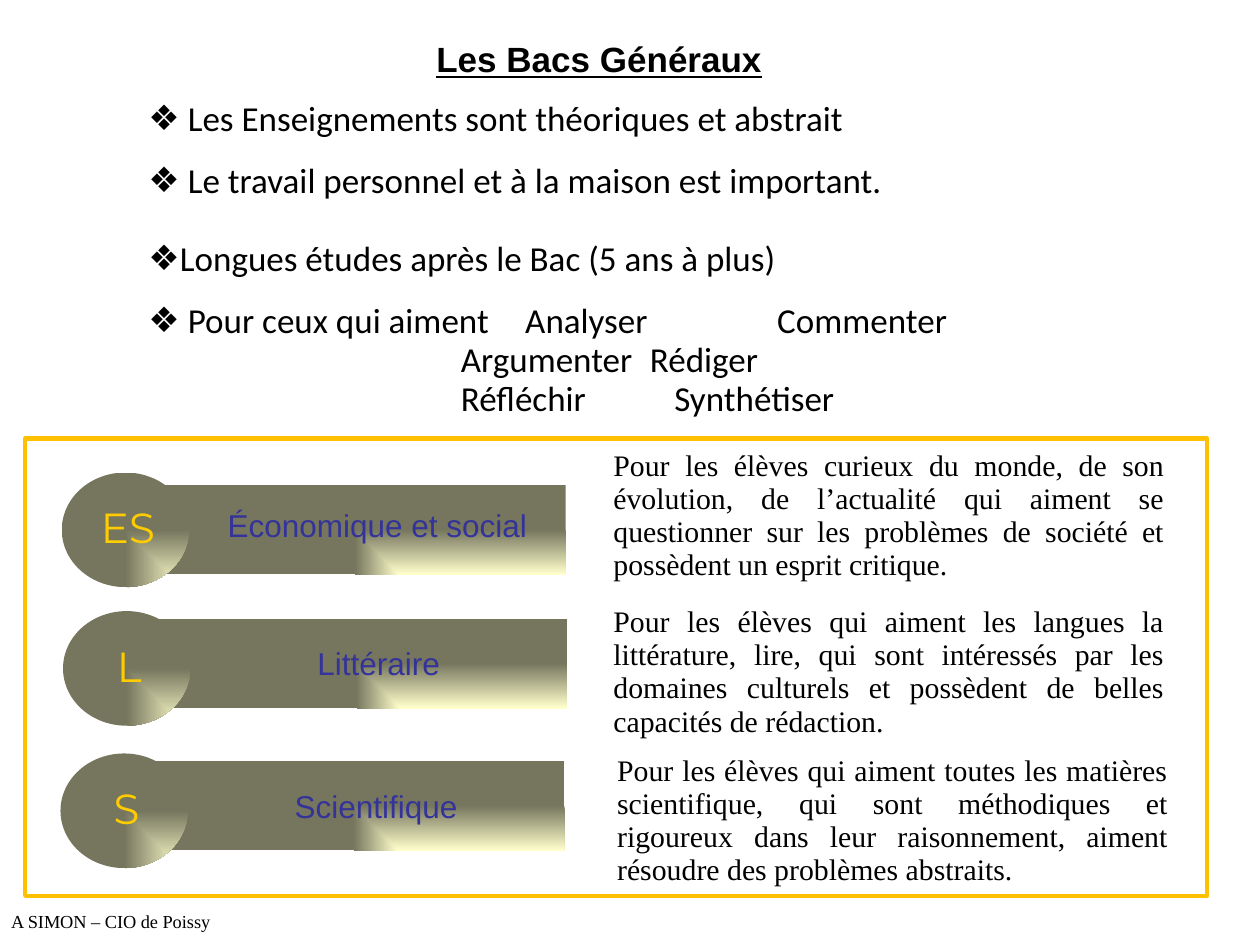
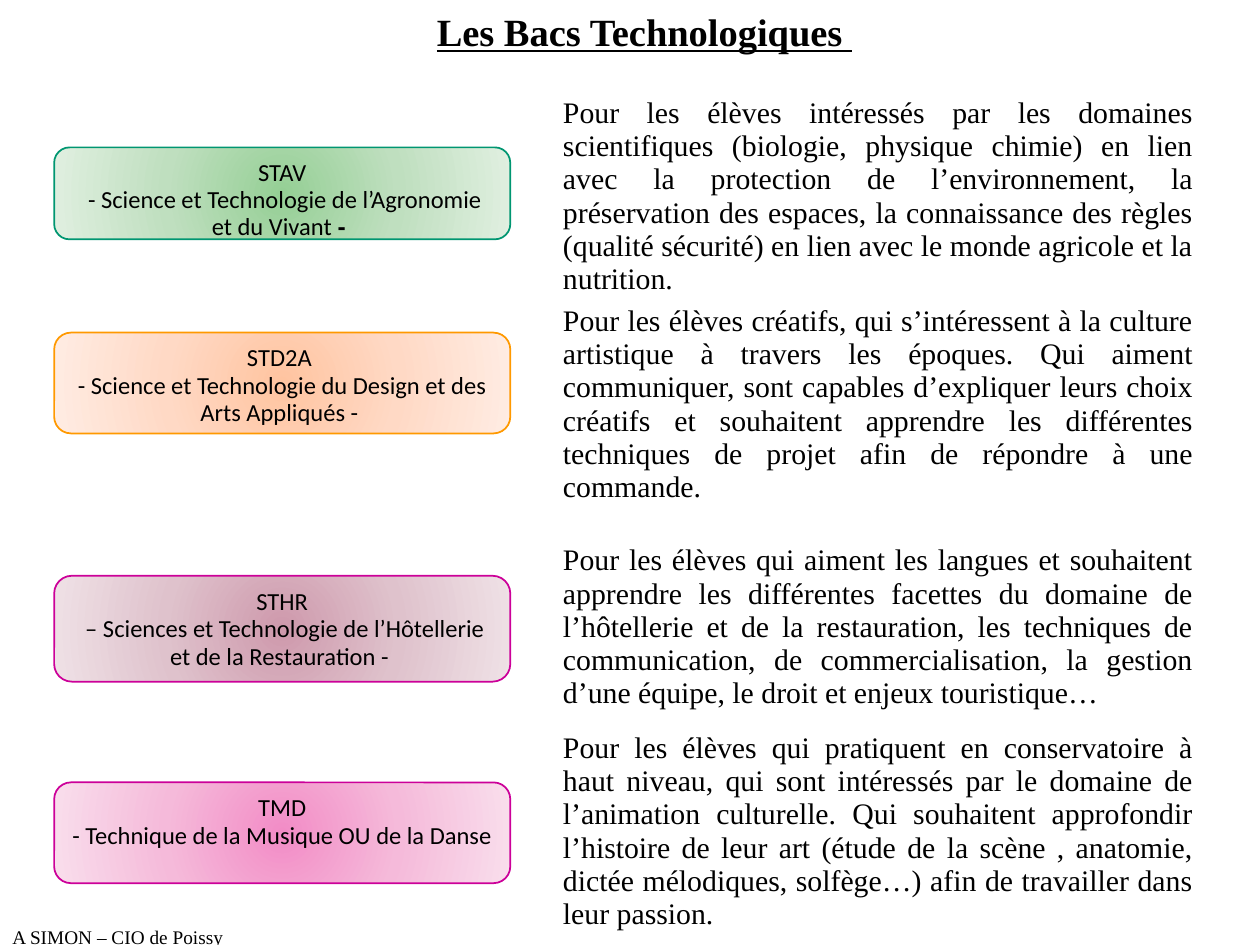
from lxml import etree
from pptx import Presentation
from pptx.dml.color import RGBColor
from pptx.enum.shapes import MSO_SHAPE
from pptx.enum.text import MSO_ANCHOR, PP_ALIGN
from pptx.oxml import parse_xml
from pptx.oxml.ns import nsdecls, qn
from pptx.util import Inches, Pt

BLACK = RGBColor(0x00, 0x00, 0x00)
GOLD = RGBColor(0xFF, 0xCC, 0x00)
FRAME_GOLD = RGBColor(0xFF, 0xC0, 0x00)
INDIGO = RGBColor(0x33, 0x33, 0x99)
CREAM = RGBColor(0xFF, 0xFF, 0xCC)
OLIVE = RGBColor(0x76, 0x76, 0x5E)
GREEN = RGBColor(0x00, 0x96, 0x71)
ORANGE = RGBColor(0xFF, 0x99, 0x00)
MAGENTA = RGBColor(0xCC, 0x00, 0x99)
GREENS = [RGBColor(0x95, 0xCF, 0x95), RGBColor(0xBF, 0xDF, 0xBF), RGBColor(0xE0, 0xEF, 0xE0)]
PEACHES = [RGBColor(0xFF, 0xC4, 0xA0), RGBColor(0xFF, 0xD9, 0xC5), RGBColor(0xFF, 0xEC, 0xE3)]
MAUVES = [RGBColor(0xCE, 0x99, 0xAC), RGBColor(0xDF, 0xC2, 0xCC), RGBColor(0xEF, 0xE1, 0xE6)]
PINKS = [RGBColor(0xF2, 0x8C, 0xC6), RGBColor(0xF5, 0xBA, 0xDA), RGBColor(0xF9, 0xDE, 0xEC)]
SERIF = "Times New Roman"
LINE_SPACING = 0.93
FOOTER = "A SIMON – CIO de Poissy"


def write(box, lines, font, size, align=PP_ALIGN.LEFT, color=BLACK, heading=False):
    frame = box.text_frame
    frame.word_wrap = True
    frame.vertical_anchor = MSO_ANCHOR.TOP
    for index, line in enumerate(lines):
        para = frame.add_paragraph() if index else frame.paragraphs[0]
        para.alignment = align
        para.line_spacing = LINE_SPACING
        span = para.add_run()
        span.text = line
        span.font.name = font
        span.font.size = Pt(size)
        span.font.color.rgb = color
        if heading:
            span.font.bold = True
            span.font.underline = True
    return frame


def shade(shape, colors, path, left, top, right, bottom):
    shape.shadow.inherit = False
    shape.line.fill.background()
    shape.fill.background()
    step = 100000 // (len(colors) - 1)
    stops = "".join(
        f'<a:gs pos="{index * step}"><a:srgbClr val="{color}"/></a:gs>'
        for index, color in enumerate(colors)
    )
    gradient = parse_xml(
        f'<a:gradFill {nsdecls("a")} rotWithShape="1"><a:gsLst>{stops}</a:gsLst>'
        f'<a:path path="{path}"><a:fillToRect l="{left}" t="{top}" r="{right}" b="{bottom}"/>'
        "</a:path></a:gradFill>"
    )
    properties = shape.element.spPr
    properties.replace(properties.find(qn("a:noFill")), gradient)


deck = Presentation()
deck.slide_width = Inches(10)
deck.slide_height = Inches(7.5)
blank = deck.slide_layouts[6]

page = deck.slides.add_slide(blank)
title = page.shapes.add_textbox(Inches(1.53), Inches(0.28), Inches(6.45), Inches(0.42))
write(title, ["Les Bacs Généraux"], "Arial", 20, PP_ALIGN.CENTER, heading=True)

points = [
    (" Les Enseignements sont théoriques et abstrait", 0, 0, []),
    (" Le travail personnel et à la maison est important.", 13, 0, []),
    ("Longues études après le Bac (5 ans à plus)", 22, 0, []),
    (" Pour ceux qui aiment \tAnalyser\tCommenter", 13, 0, [2.99, 4.99]),
    ("Argumenter\tRédiger", 0, 2.48, []),
    ("Réfléchir\t\t\tSynthétiser", 0, 2.48, []),
]
summary = page.shapes.add_textbox(Inches(1.08), Inches(0.75), Inches(6.85), Inches(2.67))
frame = write(summary, [point[0] for point in points], "Calibri", 20)
for para, (text, gap, margin, stops) in zip(frame.paragraphs, points):
    if gap:
        para.space_before = Pt(gap)
    properties = para._p.get_or_add_pPr()
    properties.set("marL", str(Inches(margin)))
    properties.set("indent", "0")
    if not margin:
        color = etree.SubElement(properties, qn("a:buClr"))
        etree.SubElement(color, qn("a:srgbClr"), val=str(BLACK))
        etree.SubElement(properties, qn("a:buFont"), typeface="Arial")
        etree.SubElement(properties, qn("a:buChar"), char="❖")
    if stops:
        tabs = etree.SubElement(properties, qn("a:tabLst"))
        for stop in stops:
            etree.SubElement(tabs, qn("a:tab"), pos=str(Inches(stop)), algn="l")

tracks = [
    ("ES", "Économique et social", 0.49, 3.75, 3.85, 4.77, 3.52,
     "Pour les élèves curieux du monde, de son évolution, de l’actualité qui aiment se "
     "questionner sur les problèmes de société et possèdent un esprit critique."),
    ("L", "Littéraire", 0.5, 4.85, 4.91, 4.77, 4.76,
     "Pour les élèves qui aiment les langues la littérature, lire, qui sont intéressés par les "
     "domaines culturels et possèdent de belles capacités de rédaction."),
    ("S", "Scientifique", 0.48, 5.98, 6.04, 4.8, 5.94,
     "Pour les élèves qui aiment toutes les matières scientifique, qui sont méthodiques et "
     "rigoureux dans leur raisonnement, aiment résoudre des problèmes abstraits."),
]
for code, name, left, top, bar_top, profile_left, profile_top, profile in tracks:
    bar = page.shapes.add_shape(
        MSO_SHAPE.RECTANGLE, Inches(left + 0.65), Inches(bar_top), Inches(3.35), Inches(0.71))
    badge = page.shapes.add_shape(
        MSO_SHAPE.OVAL, Inches(left), Inches(top), Inches(1.01), Inches(0.91))
    for shape in (bar, badge):
        shade(shape, [CREAM, OLIVE], "rect", 100000, 100000, 0, 0)
    initials = page.shapes.add_textbox(
        Inches(left - 0.07), Inches(top + 0.22), Inches(1.19), Inches(0.51))
    write(initials, [code], "Montserrat", 24, PP_ALIGN.CENTER, GOLD)
    label = page.shapes.add_textbox(
        Inches(left + 0.99), Inches(top + 0.24), Inches(3.03), Inches(0.4))
    write(label, [name], "Arial", 18, PP_ALIGN.CENTER, INDIGO)
    description = page.shapes.add_textbox(
        Inches(profile_left), Inches(profile_top), Inches(4.57), Inches(1.17))
    write(description, [profile], SERIF, 17, PP_ALIGN.JUSTIFY)

border = page.shapes.add_shape(
    MSO_SHAPE.RECTANGLE, Inches(0.2), Inches(3.48), Inches(9.38), Inches(3.63))
border.shadow.inherit = False
border.fill.background()
border.line.color.rgb = FRAME_GOLD
border.line.width = Pt(2.5)
footer = page.shapes.add_textbox(Inches(-0.01), Inches(7.19), Inches(2.47), Inches(0.27))
write(footer, [FOOTER], SERIF, 10.5)

page = deck.slides.add_slide(blank)
title = page.shapes.add_textbox(Inches(3.03), Inches(0.03), Inches(4.17), Inches(0.47))
write(title, ["Les Bacs Technologiques "], SERIF, 22, PP_ALIGN.CENTER, heading=True)
title.text_frame.margin_top = Inches(0.07)

programs = [
    ("STAV", " - Science et Technologie de l’Agronomie et du Vivant ", "- ",
     1.17, 0.73, GREENS, GREEN, 0.72, 1.43,
     "Pour les élèves intéressés par les domaines scientifiques (biologie, physique chimie) en "
     "lien avec la protection de l’environnement, la préservation des espaces, la connaissance "
     "des règles (qualité sécurité) en lien avec le monde agricole et la nutrition. "),
    ("STD2A ", "- Science et Technologie du Design et des Arts Appliqués - ", "",
     2.64, 0.8, PEACHES, ORANGE, 2.37, 1.7,
     "Pour les élèves créatifs, qui s’intéressent à la culture artistique à travers les époques. "
     "Qui aiment communiquer, sont capables d’expliquer leurs choix créatifs et souhaitent "
     "apprendre les différentes techniques de projet afin de répondre à une commande."),
    ("STHR", " – Sciences et Technologie de l’Hôtellerie et de la Restauration - ", "",
     4.57, 0.84, MAUVES, MAGENTA, 4.27, 1.43,
     "Pour les élèves qui aiment les langues et souhaitent apprendre les différentes facettes du "
     "domaine de l’hôtellerie et de la restauration, les techniques de communication, de "
     "commercialisation, la gestion d’une équipe, le droit et enjeux touristique…"),
    ("TMD", "- Technique de la Musique OU de la Danse", "",
     6.21, 0.8, PINKS, MAGENTA, 5.76, 1.7,
     "Pour les élèves qui pratiquent en conservatoire à haut niveau, qui sont intéressés par le "
     "domaine de l’animation culturelle. Qui souhaitent approfondir l’histoire de leur art "
     "(étude de la scène , anatomie, dictée mélodiques, solfège…) afin de travailler dans leur "
     "passion."),
]
for code, name, bold_tail, top, height, tints, outline, profile_top, profile_height, profile in programs:
    card = page.shapes.add_shape(
        MSO_SHAPE.ROUNDED_RECTANGLE, Inches(0.43), Inches(top), Inches(3.62), Inches(height))
    shade(card, tints, "circle", 50000, 50000, 50000, 50000)
    card.line.color.rgb = outline
    card.line.width = Pt(1)
    frame = write(card, [code, name], "Calibri", 14, PP_ALIGN.CENTER)
    frame.margin_top = Inches(0.06)
    if bold_tail:
        span = frame.paragraphs[-1].add_run()
        span.text = bold_tail
        span.font.name = "Arial"
        span.font.size = Pt(14)
        span.font.bold = True
        span.font.color.rgb = BLACK
    description = page.shapes.add_textbox(
        Inches(4.37), Inches(profile_top), Inches(5.2), Inches(profile_height))
    write(description, [profile], SERIF, 17, PP_ALIGN.JUSTIFY)

footer = page.shapes.add_textbox(Inches(0), Inches(7.3), Inches(2.47), Inches(0.28))
write(footer, [FOOTER], SERIF, 11)
footer.text_frame.margin_top = Inches(0.06)

deck.save("out.pptx")
